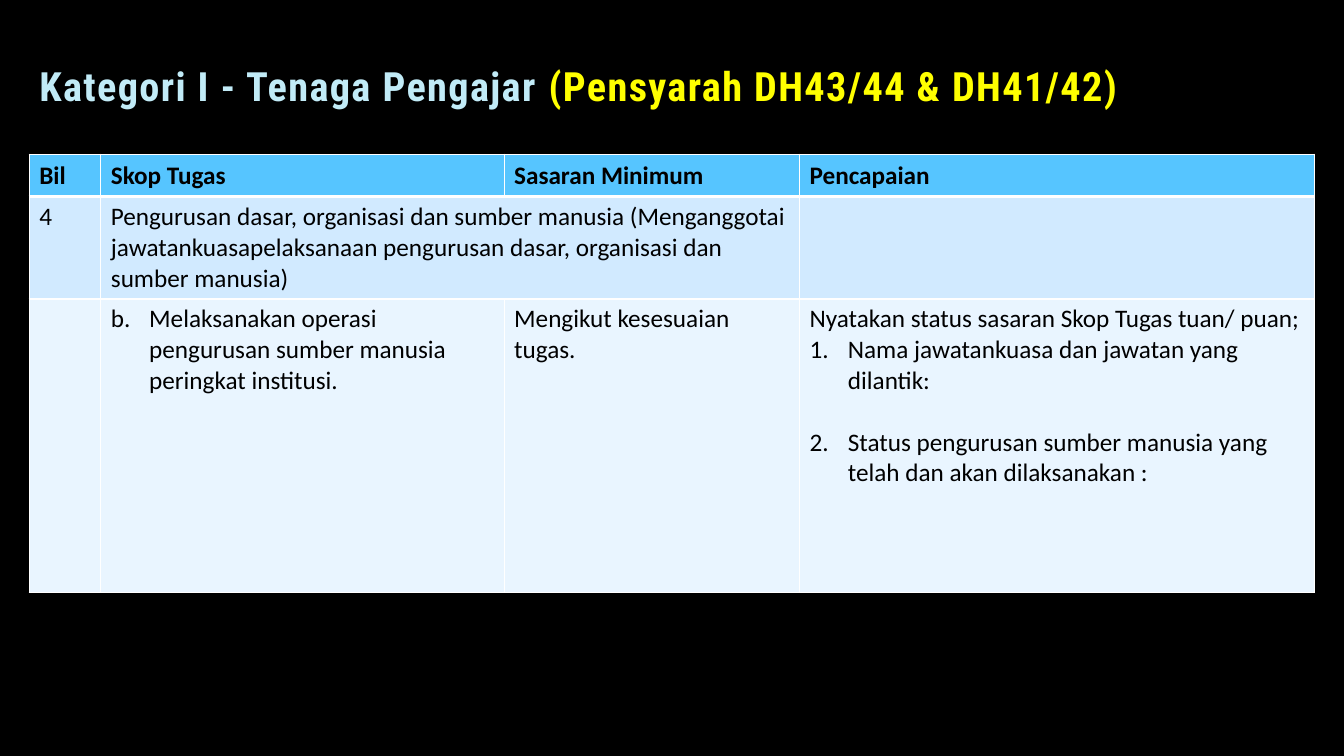
"""Build the slide on teaching staff duties, targets and achievements."""
from pptx import Presentation, util as u
from pptx.dml.color import RGBColor
from pptx.enum import text as t
from pptx.oxml.ns import qn
from lxml import etree

COLORS = {"back": "000000", "ink": "000000", "pale": "C1EBF7", "note": "FFFF00",
          "head": "56C5FF", "band": "D1EAFF", "light": "E9F5FF", "line": "FFFFFF"}
TITLE = [("Kategori I - Tenaga Pengajar ", "pale"),
         ("(Pensyarah DH43/44 & DH41/42)", "note")]
COLS = [0.71, 4, 2.93, 5.11]
ROWS = [(0.42, "head"), (1, "band"), (2.91, "light")]
LETTER, NUMBER = ("alphaLcPeriod", 2), ("arabicPeriod", 1)
CELLS = [
    ["Bil", "Skop Tugas", "Sasaran Minimum", "Pencapaian"],
    ["4", "Pengurusan dasar, organisasi dan sumber manusia (Menganggotai "
          "jawatankuasapelaksanaan pengurusan dasar, organisasi dan sumber manusia)", "", ""],
    ["", [("Melaksanakan operasi pengurusan sumber manusia peringkat institusi.", LETTER, 0)],
     "Mengikut kesesuaian tugas.",
     [("Nyatakan status sasaran Skop Tugas tuan/ puan;", None, 0),
      ("Nama jawatankuasa dan jawatan yang dilantik:", NUMBER, 0),
      ("Status pengurusan sumber manusia yang telah dan akan dilaksanakan :", NUMBER, 22)]],
]


def write(para, words, size=18, face="Calibri", color="ink", bold=False, track=0):
    run = para.add_run()
    run.text = words
    font = run.font
    font.size, font.name, font.bold = u.Pt(size), face, bold
    font.color.rgb = RGBColor.from_string(COLORS[color])
    if track:
        run._r.get_or_add_rPr().set("spc", str(track * 100))


def number(para, kind, start):
    props = para._p.get_or_add_pPr()
    props.set("marL", str(u.Inches(0.38)))
    props.set("indent", str(-u.Inches(0.38)))
    etree.SubElement(props, qn("a:buFont"), typeface="+mj-lt")
    etree.SubElement(props, qn("a:buAutoNum"), type=kind, startAt=str(start))


def edge(cell, head):
    props = cell._tc.get_or_add_tcPr()
    for i, side in enumerate(("lnL", "lnR", "lnT", "lnB")):
        wide = 3 if head and side == "lnB" else 1
        line = etree.Element(qn("a:" + side), w=str(u.Pt(wide)))
        fill = etree.SubElement(line, qn("a:solidFill"))
        etree.SubElement(fill, qn("a:srgbClr"), val=COLORS["line"])
        props.insert(i, line)


def add_title(slide):
    title = slide.shapes.title
    title.left, title.top = u.Inches(0.29), u.Inches(0.47)
    title.width, title.height = u.Inches(11.37), u.Inches(0.67)
    frame = title.text_frame
    frame.auto_size = t.MSO_AUTO_SIZE.NONE
    frame.word_wrap = True
    frame.vertical_anchor = t.MSO_ANCHOR.BOTTOM
    para = frame.paragraphs[0]
    para.alignment, para.line_spacing = t.PP_ALIGN.LEFT, 0.9
    for words, color in TITLE:
        write(para, words, size=28.8, face="Roboto Condensed", color=color, bold=True, track=1)


def add_grid(slide):
    high = sum(size for size, _ in ROWS)
    grid = slide.shapes.add_table(len(ROWS), len(COLS), u.Inches(0.29), u.Inches(1.53),
                                  u.Inches(sum(COLS)), u.Inches(high)).table
    for col, size in zip(grid.columns, COLS):
        col.width = u.Inches(size)
    for r, (size, color) in enumerate(ROWS):
        grid.rows[r].height = u.Inches(size)
        for c, body in enumerate(CELLS[r]):
            cell = grid.cell(r, c)
            cell.fill.solid()
            cell.fill.fore_color.rgb = RGBColor.from_string(COLORS[color])
            edge(cell, r == 0)
            cell.vertical_anchor = t.MSO_ANCHOR.MIDDLE if r == 0 else t.MSO_ANCHOR.TOP
            items = [(body, None, 0)] if isinstance(body, str) else body
            for i, (words, mark, gap) in enumerate(items):
                frame = cell.text_frame
                para = frame.add_paragraph() if i else frame.paragraphs[0]
                if gap:
                    para.space_before = u.Pt(gap)
                if mark:
                    number(para, *mark)
                if words:
                    write(para, words, bold=r == 0)
    grid.cell(1, 1).merge(grid.cell(1, 2))


def main():
    deck = Presentation()
    deck.slide_width, deck.slide_height = u.Inches(13.33), u.Inches(7.5)
    slide = deck.slides.add_slide(deck.slide_layouts[5])
    back = slide.background.fill
    back.solid()
    back.fore_color.rgb = RGBColor.from_string(COLORS["back"])
    add_grid(slide)
    add_title(slide)
    deck.save("out.pptx")


if __name__ == "__main__":
    main()
